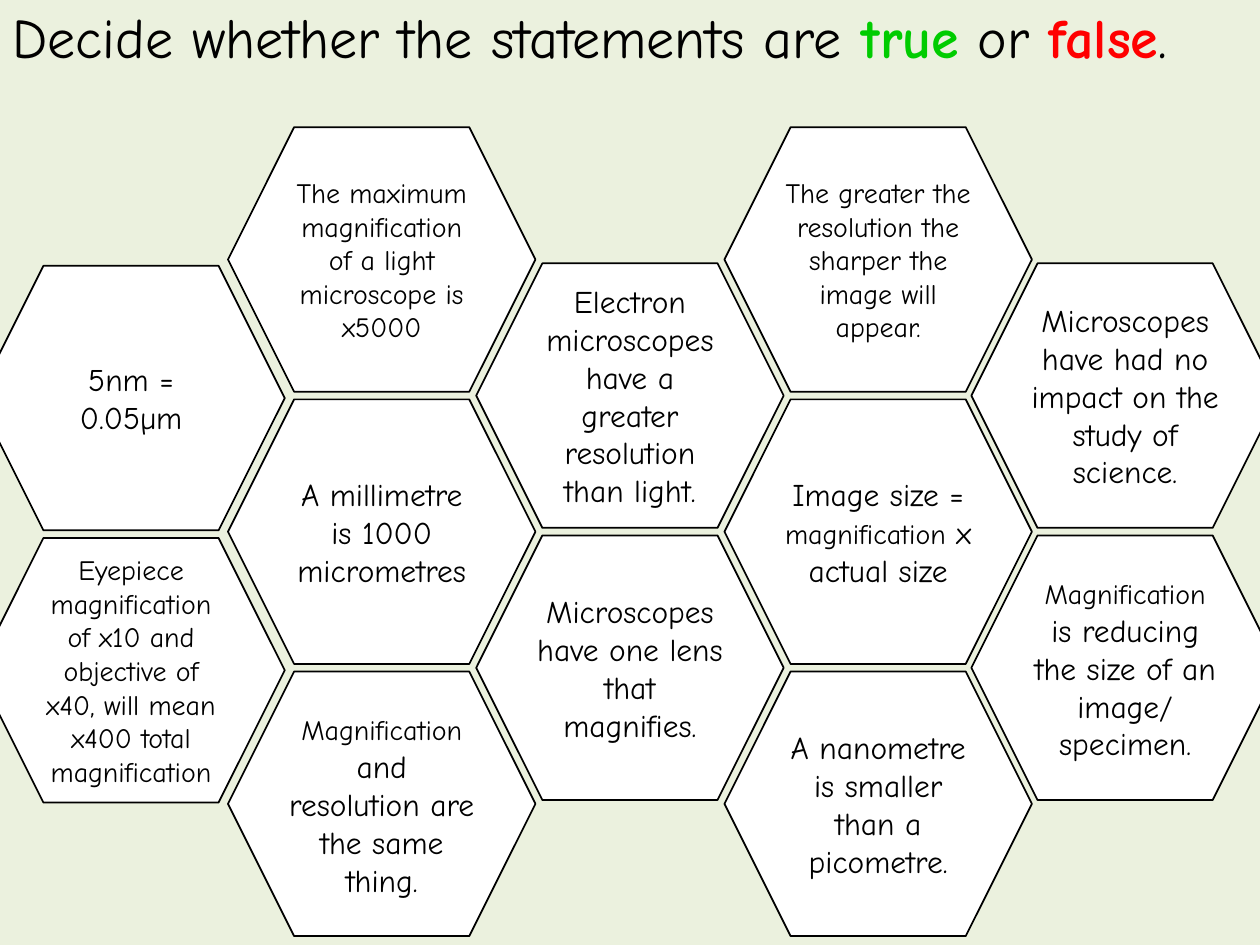
from pptx import Presentation
from pptx import util as u
from pptx.dml.color import RGBColor
from pptx.enum import shapes, text

FONT = "Comic Neue"
COLORS = {"background": "EBF1DE", "ink": "000000", "cell": "FFFFFF",
          "true": "00CC00", "false": "FF0000"}
CELL_WIDTH, CELL_HEIGHT, ROW_PITCH = 2.44, 2.1, 2.16

HEADING = [("Decide whether the statements are ", "ink"), ("true", "true"),
           (" or ", "ink"), ("false", "false"), (".", "ink")]

COLUMNS = [
    (-0.18, 2.11, [
        [("5nm = 0.05µm", 18)],
        [("Eyepiece magnification of x10 and objective of x40, "
          "will mean x400 total magnification", 16)]]),
    (1.81, 1.01, [
        [("The maximum magnification of a light microscope is x5000", 16)],
        [("A millimetre is 1000 micrometres", 18)],
        [("Magnification", 16), (" and resolution are the same thing.", 18)]]),
    (3.78, 2.09, [
        [("Electron microscopes have a greater resolution than light.", 18)],
        [("Microscopes have one lens that magnifies.", 18)]]),
    (5.75, 1.01, [
        [("The greater the resolution the sharper the image will appear.", 16)],
        [("Image size = ", 18), ("magnification", 16), (" x actual size", 18)],
        [("A nanometre is smaller than a picometre.", 18)]]),
    (7.71, 2.09, [
        [("Microscopes have had no impact on the study of science.", 18)],
        [("Magnification", 16),
         (" is reducing the size of an image/ specimen.", 18)]]),
]


def color(name):
    """Return the named colour."""
    return RGBColor.from_string(COLORS[name])


def add_run(paragraph, words, size, ink="ink", bold=False):
    """Append a formatted run to a paragraph."""
    run = paragraph.add_run()
    run.text = words
    run.font.name = FONT
    run.font.size = u.Pt(size)
    run.font.bold = bold
    run.font.color.rgb = color(ink)


def add_heading(slide, left, top, width, height):
    """Place the instruction in the title placeholder."""
    title = slide.shapes.title
    title.left, title.top = u.Inches(left), u.Inches(top)
    title.width, title.height = u.Inches(width), u.Inches(height)
    frame = title.text_frame
    frame.word_wrap = True
    frame.auto_size = text.MSO_AUTO_SIZE.NONE
    frame.vertical_anchor = text.MSO_ANCHOR.TOP
    paragraph = frame.paragraphs[0]
    paragraph.alignment = text.PP_ALIGN.LEFT
    for words, ink in HEADING:
        add_run(paragraph, words, 32, ink, bold=ink != "ink")


def add_statement(slide, left, top, width, height, parts):
    """Draw one hexagon holding a statement."""
    cell = slide.shapes.add_shape(
        shapes.MSO_SHAPE.HEXAGON, u.Inches(left), u.Inches(top),
        u.Inches(width), u.Inches(height))
    cell.shadow.inherit = False
    cell.fill.solid()
    cell.fill.fore_color.rgb = color("cell")
    cell.line.color.rgb = color("ink")
    cell.line.width = u.Pt(1)
    frame = cell.text_frame
    frame.word_wrap = True
    frame.vertical_anchor = text.MSO_ANCHOR.MIDDLE
    paragraph = frame.paragraphs[0]
    paragraph.alignment = text.PP_ALIGN.CENTER
    for words, size in parts:
        add_run(paragraph, words, size)


def add_column(slide, left, top, statements):
    """Stack statements downwards at the row pitch."""
    for row, parts in enumerate(statements):
        add_statement(slide, left, top + row * ROW_PITCH,
                      CELL_WIDTH, CELL_HEIGHT, parts)


def main():
    """Build and save the slide."""
    deck = Presentation()
    deck.slide_width, deck.slide_height = u.Inches(10), u.Inches(7.5)
    slide = deck.slides.add_slide(deck.slide_layouts.get_by_name("Title Only"))
    slide.background.fill.solid()
    slide.background.fill.fore_color.rgb = color("background")
    add_heading(slide, 0, -0.03, 9.78, 1.18)
    for left, top, statements in COLUMNS:
        add_column(slide, left, top, statements)
    deck.save("out.pptx")


if __name__ == "__main__":
    main()
